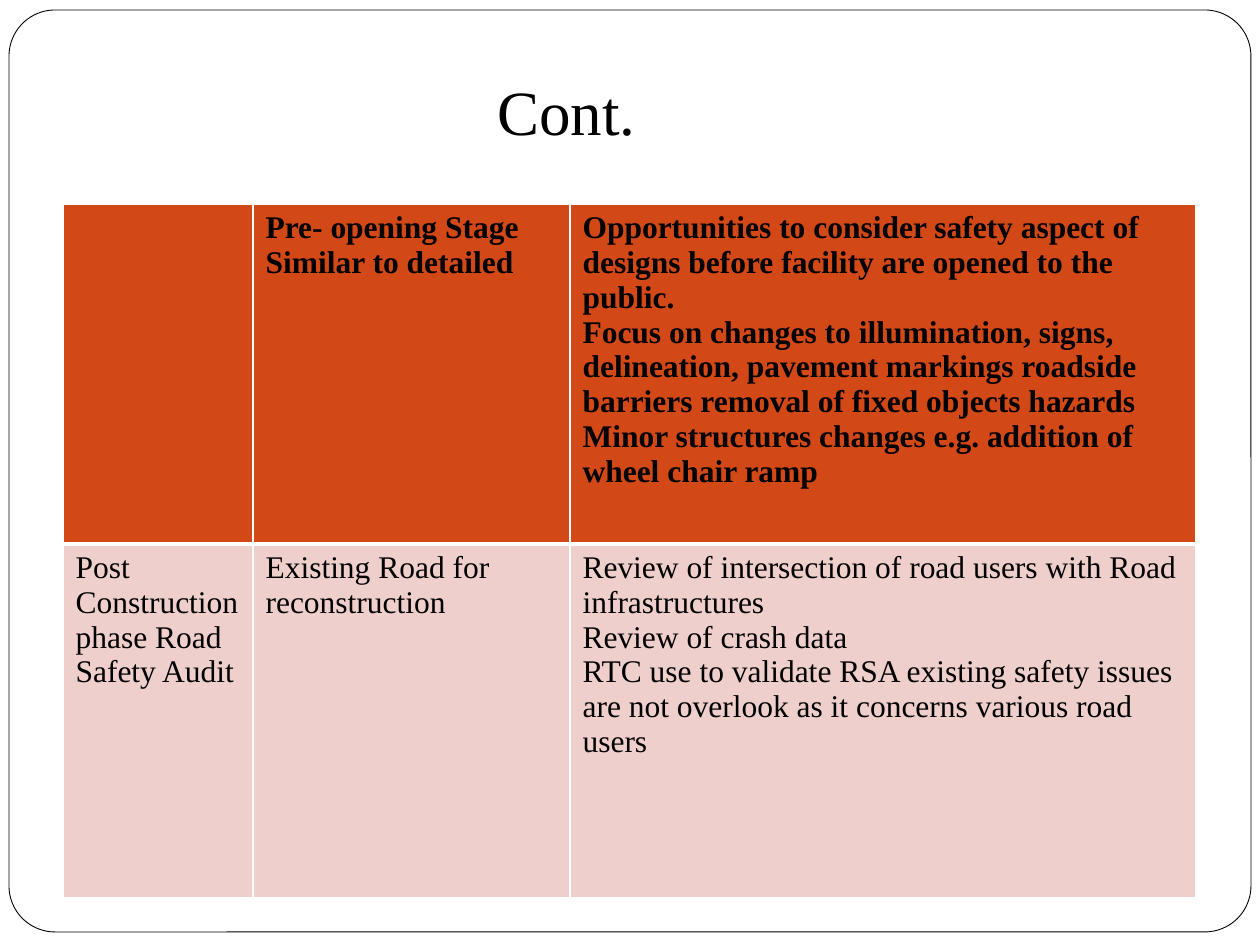
from lxml import etree
from pptx import Presentation
from pptx.dml.color import RGBColor
from pptx.enum.shapes import MSO_SHAPE
from pptx.enum.text import MSO_ANCHOR, PP_ALIGN
from pptx.oxml.ns import qn
from pptx.util import Pt

ROUND = MSO_SHAPE.ROUNDED_RECTANGLE
MIDDLE = MSO_ANCHOR.MIDDLE
CENTER = PP_ALIGN.CENTER
PX = 914400 // 126
FONT = "Times New Roman"
BLACK, WHITE = "000000", "FFFFFF"

TITLE = "Cont."
ROWS = [
    ["",
     "Pre- opening Stage\nSimilar to detailed",
     "Opportunities to consider safety aspect of designs before facility "
     "are opened to the public.\n"
     "Focus on changes to illumination, signs, delineation, pavement "
     "markings roadside barriers removal of fixed objects hazards\n"
     "Minor structures changes e.g. addition of wheel chair ramp"],
    ["Post Construction phase Road Safety Audit",
     "Existing Road for reconstruction",
     "Review of intersection of road users with Road infrastructures\n"
     "Review of crash data\n"
     "RTC use to validate RSA existing safety issues are not overlook as "
     "it concerns various road users"],
]
WIDTHS = [190, 317, 626]
HEIGHTS = [340, 354]
FILLS = ["D34817", "EFCFCC"]
BOTTOMS = [3, 1]


def color(code):
    return RGBColor.from_string(code)


def box(*sizes):
    return [size * PX for size in sizes]


def style(frame, size, bold=False):
    for para in frame.paragraphs:
        for run in para.runs:
            font = run.font
            font.name, font.size, font.bold = FONT, Pt(size), bold
            font.color.rgb = color(BLACK)


def border(cell, sides):
    props = cell._tc.get_or_add_tcPr()
    for spot, (side, width) in enumerate(sides.items()):
        line = etree.Element(qn("a:" + side), w=str(Pt(width)))
        fill = etree.SubElement(line, qn("a:solidFill"))
        etree.SubElement(fill, qn("a:srgbClr"), val=WHITE)
        props.insert(spot, line)


deck = Presentation()
deck.slide_width, deck.slide_height = box(1260, 945)
slide = deck.slides.add_slide(deck.slide_layouts[5])
title = slide.shapes.title

frame = slide.shapes.add_shape(ROUND, *box(9, 10, 1242, 922))
frame.adjustments[0] = 0.05
frame.shadow.inherit = False
frame.fill.solid()
frame.fill.fore_color.rgb = color(WHITE)
frame.line.color.rgb = color(BLACK)
frame.line.width = Pt(0.5)
title._element.addprevious(frame._element)

title.left, title.top, title.width, title.height = box(353, 66, 427, 89)
title.text_frame.text = TITLE
title.text_frame.vertical_anchor = MIDDLE
title.text_frame.paragraphs[0].alignment = CENTER
style(title.text_frame, 36)

table = slide.shapes.add_table(
    len(ROWS), len(WIDTHS), *box(63, 204, sum(WIDTHS), sum(HEIGHTS))).table
for col, width in zip(table.columns, WIDTHS):
    col.width = width * PX
for r, row in enumerate(ROWS):
    table.rows[r].height = HEIGHTS[r] * PX
    top = BOTTOMS[r - 1] if r else 1
    for c, text in enumerate(row):
        cell = table.cell(r, c)
        cell.text_frame.text = text
        style(cell.text_frame, 18, r == 0)
        cell.fill.solid()
        cell.fill.fore_color.rgb = color(FILLS[r])
        border(cell, {"lnL": 1, "lnR": 1, "lnT": top, "lnB": BOTTOMS[r]})

deck.save("out.pptx")
